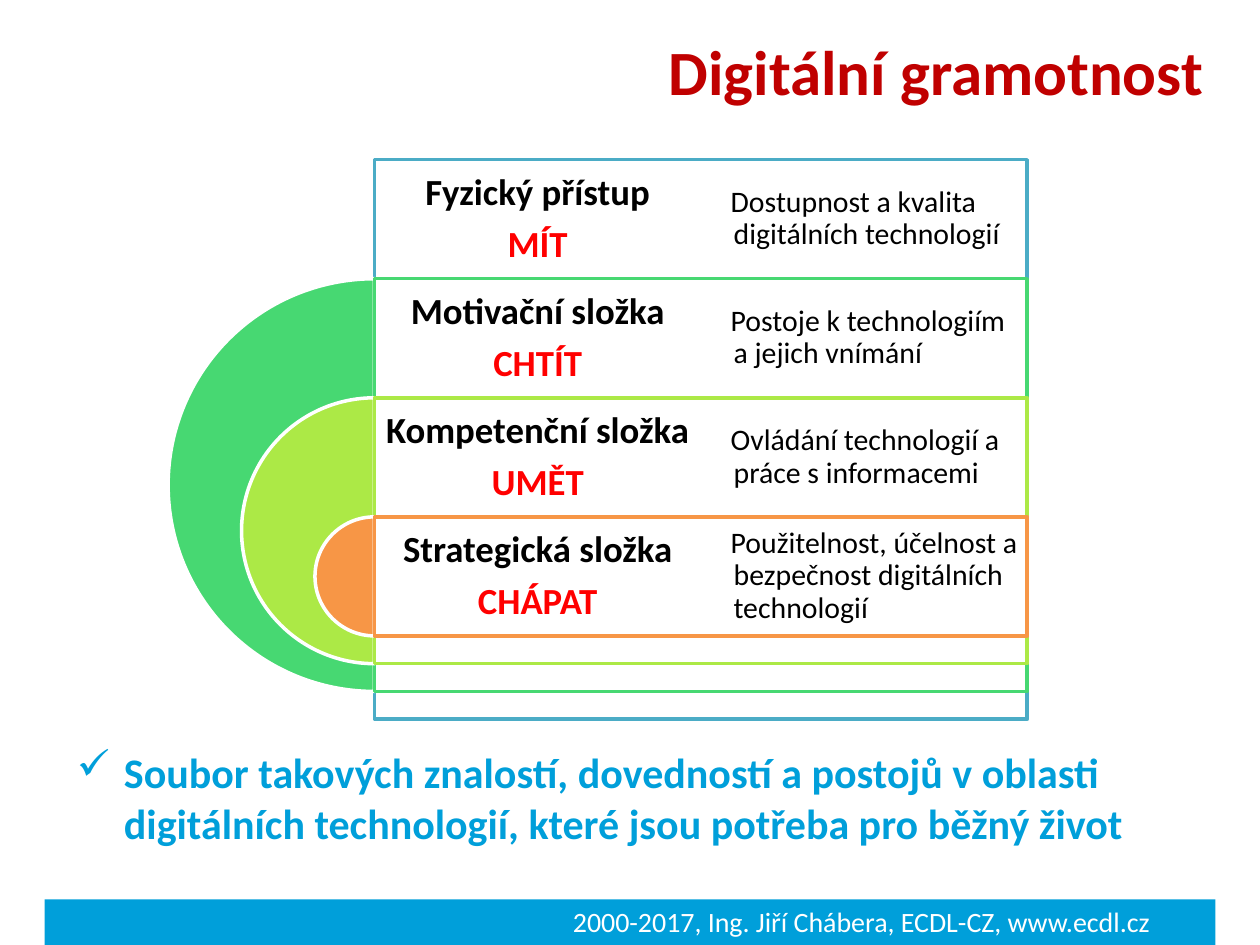
from lxml.etree import SubElement
from pptx import Presentation
from pptx.dml.color import RGBColor
from pptx.enum.shapes import MSO_SHAPE
from pptx.enum.text import MSO_ANCHOR, MSO_AUTO_SIZE, PP_ALIGN
from pptx.oxml.ns import qn
from pptx.util import Cm, Pt

WHITE = RGBColor(0xFF, 0xFF, 0xFF)
BLACK = RGBColor(0x00, 0x00, 0x00)
RED = RGBColor(0xFF, 0x00, 0x00)
DARK_RED = RGBColor(0xC0, 0x00, 0x00)
BLUE = RGBColor(0x00, 0x9F, 0xDA)
TEAL = RGBColor(0x4B, 0xAC, 0xC6)
GREEN = RGBColor(0x47, 0xD8, 0x72)
LIME = RGBColor(0xAC, 0xE9, 0x46)
ORANGE = RGBColor(0xF7, 0x96, 0x46)

# All layout numbers are centimetres.
LEFT, TOP = 7.55, 3.22
ROW_HEIGHT = 2.4
COLUMN_WIDTH = 6.58
DIAMETER_STEP = 2.96

# Component, keyword, description, pie colour, frame colour
LAYERS = [
    ("Fyzický přístup", "MÍT",
     "Dostupnost a kvalita digitálních technologií", WHITE, TEAL),
    ("Motivační složka", "CHTÍT",
     "Postoje k technologiím a jejich vnímání", GREEN, GREEN),
    ("Kompetenční složka", "UMĚT",
     "Ovládání technologií a práce s informacemi", LIME, LIME),
    ("Strategická složka", "CHÁPAT",
     "Použitelnost, účelnost a bezpečnost digitálních technologií",
     ORANGE, ORANGE),
]


def add_shape(s, kind, x, y, w, h, fill, line=None):
    sp = s.shapes.add_shape(kind, Cm(x), Cm(y), Cm(w), Cm(h))
    sp.shadow.inherit = False
    sp.fill.solid()
    sp.fill.fore_color.rgb = fill
    if line is None:
        sp.line.fill.background()
    else:
        sp.line.color.rgb = line
        sp.line.width = Pt(2)
    return sp


def add_text(s, x, y, w, h, text, margin=None):
    """Add a wrapping text box; a margin marks a middle-anchored cell."""
    tf = s.shapes.add_textbox(Cm(x), Cm(y), Cm(w), Cm(h)).text_frame
    tf.word_wrap = True
    tf.text = text
    if margin is None:
        tf.auto_size = MSO_AUTO_SIZE.SHAPE_TO_FIT_TEXT
    else:
        tf.vertical_anchor = MSO_ANCHOR.MIDDLE
        tf.margin_left = tf.margin_right = Cm(margin)
        tf.margin_top = tf.margin_bottom = Cm(margin)
    return tf


def style(p, size, color, bold=False, align=None):
    p.alignment = align
    for r in p.runs:
        r.font.name = "Calibri"
        r.font.size = Pt(size)
        r.font.bold = bold
        r.font.color.rgb = color


def indent(p, left, first):
    pPr = p._p.get_or_add_pPr()
    pPr.set("marL", str(Cm(left)))
    pPr.set("indent", str(Cm(first)))
    return pPr


def add_frame(s, y, height, color):
    sp = add_shape(s, MSO_SHAPE.RECTANGLE, LEFT, y, 2 * COLUMN_WIDTH, height,
                   WHITE, color)
    fill_color = sp.fill._xPr.find(qn("a:solidFill"))[0]
    SubElement(fill_color, qn("a:alpha"), val="90000")


def add_layer(s, index, layer):
    """Draw a half disc, its frame and the two text cells of one layer."""
    name, keyword, description, pie_color, frame_color = layer
    y = TOP + index * ROW_HEIGHT
    diameter = ROW_HEIGHT + DIAMETER_STEP * (len(LAYERS) - 1 - index)

    pie = add_shape(s, MSO_SHAPE.PIE, LEFT - diameter / 2, y,
                    diameter, diameter, pie_color, WHITE)
    pie.adjustments[0] = 54
    pie.adjustments[1] = 162
    add_frame(s, y, diameter, frame_color)

    tf = add_text(s, LEFT, y, COLUMN_WIDTH, ROW_HEIGHT,
                  f"{name}\n{keyword}", 0.23)
    for p, color in zip(tf.paragraphs, (BLACK, RED)):
        style(p, 21, color, True, PP_ALIGN.CENTER)
        p.line_spacing = 0.9
        p.space_after = Pt(7)

    tf = add_text(s, LEFT + COLUMN_WIDTH, y, COLUMN_WIDTH, ROW_HEIGHT,
                  description, 0.18)
    p = tf.paragraphs[0]
    indent(p, 0.48, -0.06)
    p.line_spacing = 0.9
    style(p, 17, BLACK)


def add_footer(s):
    add_shape(s, MSO_SHAPE.RECTANGLE, 0.9, 18.13, 23.6, 0.92, BLUE)
    tf = add_text(s, 11.3, 18.1, 13.1, 0.94,
                  "2000-2017, Ing. Jiří Chábera, ECDL-CZ, www.ecdl.cz")
    style(tf.paragraphs[0], 16, WHITE)


def add_title(s):
    tf = add_text(s, 7.11, 0.53, 17.4, 1.8, "Digitální gramotnost")
    style(tf.paragraphs[0], 36, DARK_RED, True, PP_ALIGN.RIGHT)


def add_definition(s):
    tf = add_text(s, 1.3, 14.93, 22.8, 2.31,
                  "Soubor takových znalostí, dovedností a postojů v oblasti "
                  "digitálních technologií, které jsou potřeba pro běžný život")
    p = tf.paragraphs[0]
    pPr = indent(p, 0.95, -0.95)
    SubElement(pPr, qn("a:buChar"), char="✓")
    style(p, 24, BLUE, True)


def main():
    prs = Presentation()
    prs.slide_width, prs.slide_height = Cm(25.4), Cm(19.05)
    s = prs.slides.add_slide(prs.slide_layouts[6])
    add_footer(s)
    add_title(s)
    for index, layer in enumerate(LAYERS):
        add_layer(s, index, layer)
    add_definition(s)
    prs.save("out.pptx")


if __name__ == "__main__":
    main()
